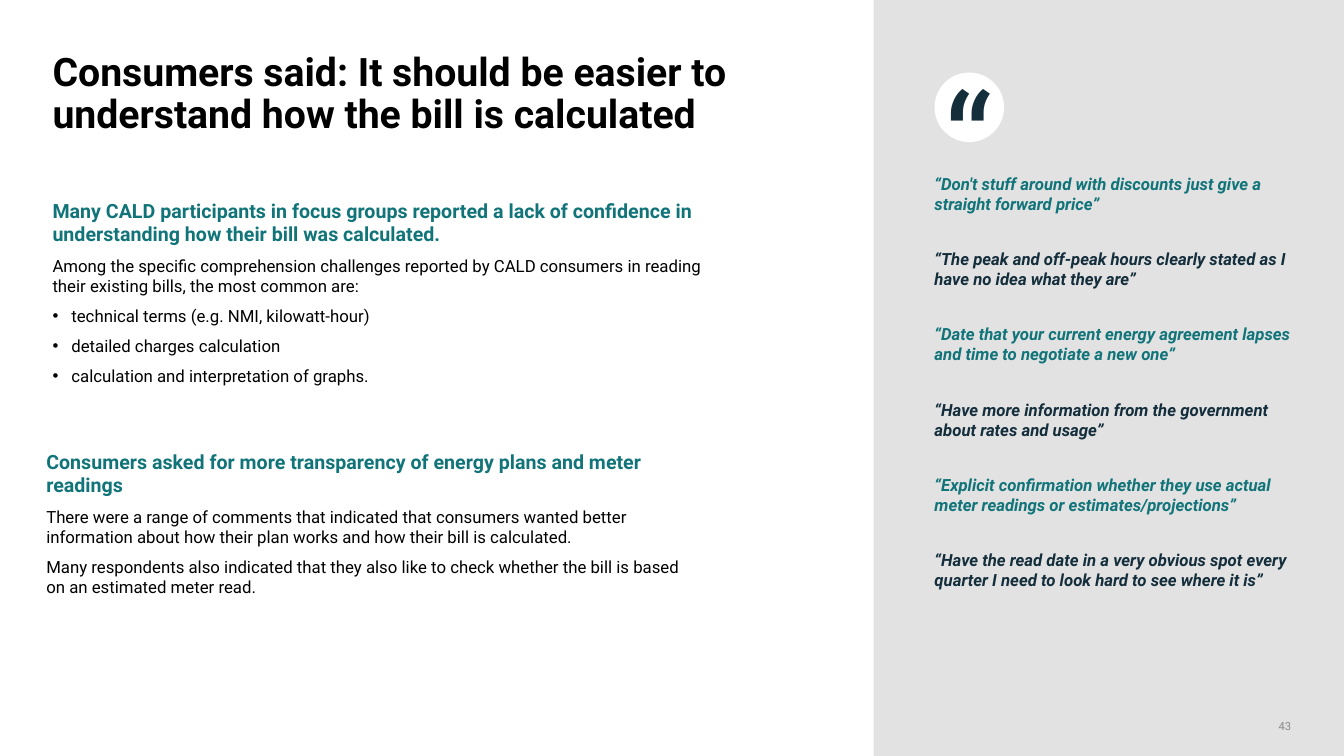
from pptx import Presentation
from pptx.dml.color import RGBColor
from pptx.enum.shapes import MSO_SHAPE as Shape
from pptx.enum.text import MSO_ANCHOR as Anchor, MSO_AUTO_SIZE as Auto, PP_ALIGN as Align
from pptx.oxml.ns import qn
from pptx.util import Pt
from lxml.etree import SubElement

TEAL, NAVY, BLACK, WHITE = "117479", "142E3B", "000000", "FFFFFF"
PANEL, GREY = "E2E2E3", "8C8C8C"
LEFT, SIDE = 37.5, 667.5


def paint(target, color):
    target.rgb = RGBColor.from_string(color)


class Page:
    """Draws styled elements on the current slide."""

    def __init__(self, slide, face):
        self.slide = slide
        self.face = face

    def place(self, item, box):
        item.left, item.top, item.width, item.height = map(Pt, box)

    def shape(self, kind, box, color):
        item = self.slide.shapes.add_shape(kind, *map(Pt, box))
        item.shadow.inherit = False
        item.fill.solid()
        paint(item.fill.fore_color, color)
        item.line.fill.background()
        return item

    def back(self, item):
        self.slide.shapes._spTree.insert(2, item._element)

    def frame(self, item, inset, anchor=Anchor.TOP):
        frame = item.text_frame
        frame.word_wrap = True
        frame.auto_size = Auto.NONE
        frame.vertical_anchor = anchor
        if not inset:
            frame.margin_left = frame.margin_right = 0
            frame.margin_top = frame.margin_bottom = 0
        return frame

    def line(self, para, text, size, color, bold=False, italic=False, bullet=False,
             lead=1.0, before=0, after=0, align=Align.LEFT):
        para.text = text
        props = para._p.get_or_add_pPr()
        props.set("marL", str(Pt(13.5) if bullet else 0))
        props.set("indent", str(-Pt(13.5) if bullet else 0))
        if bullet:
            SubElement(props, qn("a:buFont")).set("typeface", "Arial")
            SubElement(props, qn("a:buChar")).set("char", "•")
        else:
            SubElement(props, qn("a:buNone"))
        para.alignment = align
        para.line_spacing = lead
        para.space_before, para.space_after = Pt(before), Pt(after)
        font = para.font
        font.name, font.size = self.face, Pt(size)
        font.bold, font.italic = bold, italic
        paint(font.color, color)

    def fill(self, frame, rows, gap=7, after=0):
        for i, (text, style) in enumerate(rows):
            para = frame.add_paragraph() if i else frame.paragraphs[0]
            self.line(para, text, before=gap if i else 0, after=after, **style)

    def holder(self, index, box, rows, after=0):
        item = self.slide.placeholders[index]
        self.place(item, box)
        self.fill(self.frame(item, False), rows, after=after)

    def text(self, box, rows, inset=True, anchor=Anchor.TOP):
        item = self.slide.shapes.add_textbox(*map(Pt, box))
        self.fill(self.frame(item, inset, anchor), rows)


HEAD = dict(size=14, color=TEAL, bold=True)
BODY = dict(size=12, color=BLACK)
ITEM = dict(BODY, bullet=True)
QUOTES = [
    "“Don't stuff around with discounts just give a straight forward price”",
    "“The peak and off-peak hours clearly stated as I have no idea what they are”",
    "“Date that your current energy agreement lapses and time to negotiate a new one”",
    "“Have more information from the government about rates and usage”",
    "“Explicit confirmation whether they use actual meter readings or estimates/projections”",
    "“Have the read date in a very obvious spot every quarter I need to look hard to see where it is”",
]


def main():
    deck = Presentation()
    deck.slide_width, deck.slide_height = Pt(960), Pt(540)
    page = Page(deck.slides.add_slide(deck.slide_layouts[3]), "Roboto")

    page.back(page.shape(Shape.RECTANGLE, (624, 0, 336, 540), PANEL))
    page.holder(0, (LEFT, 37.5, 521.3, 61.2), [
        ("Consumers said: It should be easier to understand how the bill is calculated",
         dict(size=28, color=BLACK, bold=True, lead=0.9)),
    ])
    page.holder(1, (LEFT, 141.8, 481, 149), [
        ("Many CALD participants in focus groups reported a lack of confidence in "
         "understanding how their bill was calculated.", HEAD),
        ("Among the specific comprehension challenges reported by CALD consumers in "
         "reading their existing bills, the most common are:", BODY),
        ("technical terms (e.g. NMI, kilowatt-hour)", ITEM),
        ("detailed charges calculation", ITEM),
        ("calculation and interpretation of graphs.", ITEM),
    ])
    page.text((26, 317.5, 480.2, 113.8), [
        ("Consumers asked for more transparency of energy plans and meter readings", HEAD),
        ("There were a range of comments that indicated that consumers wanted better "
         "information about how their plan works and how their bill is calculated.", BODY),
        ("Many respondents also indicated that they also like to check whether the bill "
         "is based on an estimated meter read.", BODY),
    ])

    page.shape(Shape.OVAL, (SIDE, 51.8, 49.7, 49.7), WHITE)
    page.text((SIDE, 37.5, 41, 123.8), [("“", dict(size=96, color=NAVY))])
    page.holder(2, (SIDE, 123.8, 255, 358.6), [
        (quote, dict(size=12, color=(TEAL, NAVY)[i % 2], bold=True, italic=True))
        for i, quote in enumerate(QUOTES)
    ], after=18)
    page.text((890, 514, 32.4, 9.4), [("43", dict(size=8, color=GREY, align=Align.RIGHT))],
              inset=False, anchor=Anchor.BOTTOM)
    deck.save("out.pptx")


if __name__ == "__main__":
    main()
